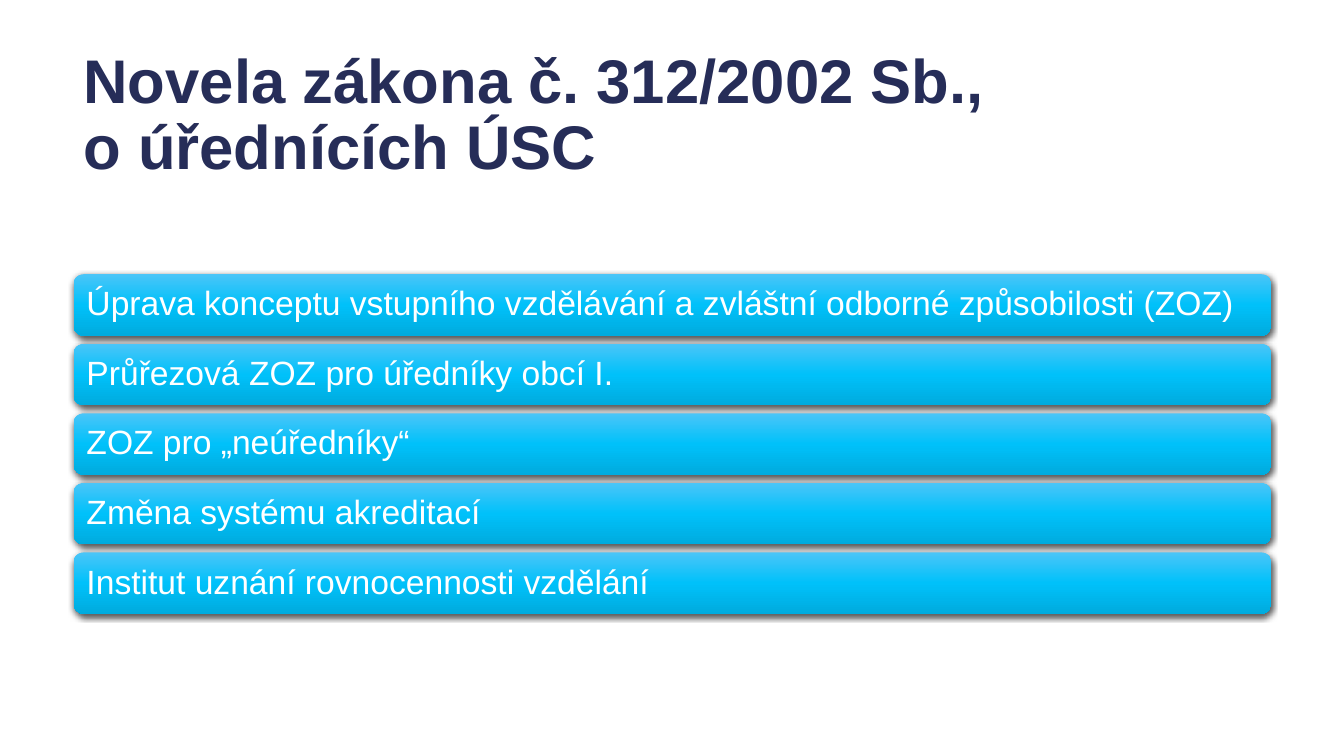
import copy

import pptx
import pptx.dml.color
import pptx.enum.shapes
import pptx.enum.text
import pptx.oxml
import pptx.oxml.ns
import pptx.util
from pptx.util import Inches

COLOURS = {
    "title": "262D58",
    "bar_text": "FFFFFF",
    "bar_top": "4BC5F8",
    "bar_middle": "00C1FA",
    "bar_bottom": "00ABDE",
    "shadow": "000000",
}
FONT = "Arial"
TITLE = "Novela zákona č. 312/2002 Sb.,\vo úřednících ÚSC"
TOPICS = [
    "Úprava konceptu vstupního vzdělávání a zvláštní odborné způsobilosti (ZOZ)",
    "Průřezová ZOZ pro úředníky obcí I.",
    "ZOZ pro „neúředníky“",
    "Změna systému akreditací",
    "Institut uznání rovnocennosti vzdělání",
]
BAR_HEIGHT = 0.61
BAR_PITCH = 0.69


def rgb(name):
    return pptx.dml.color.RGBColor.from_string(COLOURS[name])


def write_text(shape, text, *, size, colour, bold=False, inset_x=0.1, inset_y=0.05):
    frame = shape.text_frame
    frame.word_wrap = True
    frame.vertical_anchor = pptx.enum.text.MSO_ANCHOR.MIDDLE
    frame.margin_left = frame.margin_right = Inches(inset_x)
    frame.margin_top = frame.margin_bottom = Inches(inset_y)
    para = frame.paragraphs[0]
    para.text = text
    para.alignment = pptx.enum.text.PP_ALIGN.LEFT
    para.line_spacing = 0.9
    for span in para.runs:
        span.font.name = FONT
        span.font.size = pptx.util.Pt(size)
        span.font.bold = bold
        span.font.color.rgb = rgb(colour)


def fill_gradient(shape):
    """Fill with a vertical gradient of three stops."""
    shape.fill.gradient()
    shape.fill.gradient_angle = 270
    stop_list = shape.element.spPr.find(".//" + pptx.oxml.ns.qn("a:gsLst"))
    stop_list.append(copy.deepcopy(stop_list[-1]))
    names = ("bar_top", "bar_middle", "bar_bottom")
    for stop, name, position in zip(shape.fill.gradient_stops, names, (0, 0.5, 1)):
        stop.color.rgb = rgb(name)
        stop.position = position


def add_shadow(shape):
    shape.shadow.inherit = False
    effects = shape.element.spPr.find(pptx.oxml.ns.qn("a:effectLst"))
    effects.append(pptx.oxml.parse_xml(
        f'<a:outerShdw {pptx.oxml.ns.nsdecls("a")} blurRad="{pptx.util.Pt(4.5)}" '
        f'dist="{pptx.util.Pt(1.5)}" dir="5400000" algn="ctr" rotWithShape="0">'
        f'<a:srgbClr val="{COLOURS["shadow"]}"><a:alpha val="63000"/></a:srgbClr>'
        '</a:outerShdw>'))


def add_title(page, left, top, width, height):
    box = page.shapes.add_textbox(*map(Inches, (left, top, width, height)))
    write_text(box, TITLE, size=44, colour="title", bold=True)


def add_topic_bars(page, left, top, width):
    for index, topic in enumerate(TOPICS):
        bar = page.shapes.add_shape(
            pptx.enum.shapes.MSO_SHAPE.ROUNDED_RECTANGLE,
            Inches(left), Inches(top + index * BAR_PITCH),
            Inches(width), Inches(BAR_HEIGHT))
        fill_gradient(bar)
        bar.line.fill.background()
        add_shadow(bar)
        write_text(bar, topic, size=24, colour="bar_text", inset_y=0.1)


def main():
    deck = pptx.Presentation()
    deck.slide_width, deck.slide_height = Inches(13.33), Inches(7.5)
    page = deck.slides.add_slide(deck.slide_layouts[6])
    add_title(page, 0.73, 0.43, 11.88, 1.45)
    add_topic_bars(page, 0.73, 2.72, 11.88)
    deck.save("out.pptx")


if __name__ == "__main__":
    main()
